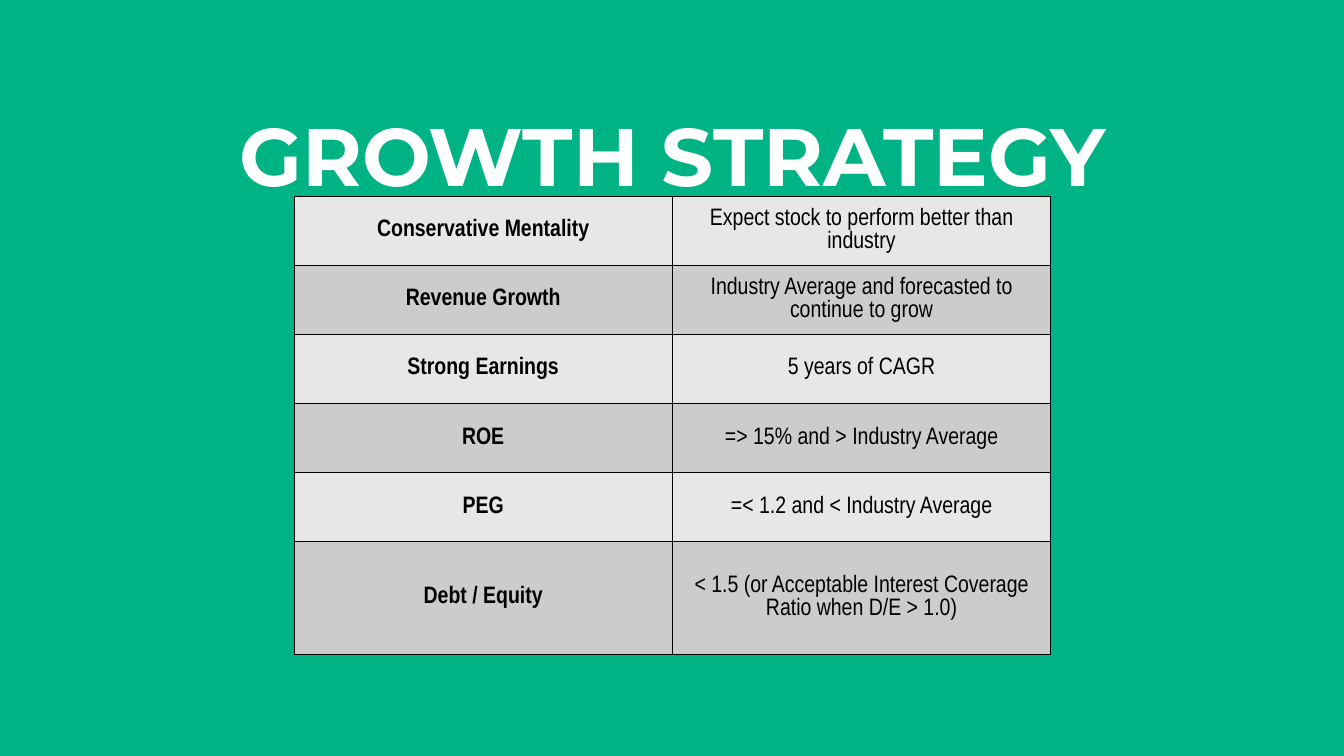
from pptx import Presentation
from pptx.dml.color import RGBColor
from pptx.enum.text import MSO_ANCHOR, PP_ALIGN
from pptx.oxml import parse_xml
from pptx.oxml.ns import nsdecls
from pptx.util import Inches, Pt

GREEN = RGBColor(0x00, 0xB3, 0x85)
WHITE = RGBColor(0xFF, 0xFF, 0xFF)
BLACK = RGBColor(0x00, 0x00, 0x00)
LIGHT = RGBColor(0xE7, 0xE7, 0xE7)
GREY = RGBColor(0xCC, 0xCC, 0xCC)


def write(para, text, **style):
    para.alignment = PP_ALIGN.CENTER
    run = para.add_run()
    run.text = text
    run.font.color.rgb = style.pop("color")
    for key, value in style.items():
        setattr(run.font, key, value)


def border(cell):
    props = cell._tc.get_or_add_tcPr()
    for index, side in enumerate(("lnL", "lnR", "lnT", "lnB")):
        props.insert(index, parse_xml(
            f'<a:{side} {nsdecls("a")} w="{Pt(1)}"><a:solidFill>'
            f'<a:srgbClr val="{BLACK}"/></a:solidFill></a:{side}>'))


deck = Presentation()
deck.slide_width = Inches(21.99)
deck.slide_height = Inches(12.37)
slide = deck.slides.add_slide(deck.slide_layouts[6])
slide.background.fill.solid()
slide.background.fill.fore_color.rgb = GREEN

title = slide.shapes.add_textbox(
    Inches(1.11), Inches(1.84), Inches(19.79), Inches(1.65))
frame = title.text_frame
frame.word_wrap = True
frame.vertical_anchor = MSO_ANCHOR.MIDDLE
head = frame.paragraphs[0]
head.line_spacing = 0.8
write(head, "GROWTH STRATEGY", name="Montserrat", size=Pt(96), bold=True, color=WHITE)

rules = [
    ("Conservative Mentality", "Expect stock to perform better than industry"),
    ("Revenue Growth", "Industry Average and forecasted to continue to grow"),
    ("Strong Earnings", "5 years of CAGR"),
    ("ROE", "=> 15% and > Industry Average"),
    ("PEG", "=< 1.2 and < Industry Average"),
    ("Debt / Equity", "< 1.5 (or Acceptable Interest Coverage Ratio when D/E > 1.0)"),
]
table = slide.shapes.add_table(
    len(rules), 2, Inches(4.81), Inches(3.21), Inches(12.38), Inches(7.49)).table
for row, texts in enumerate(rules):
    table.rows[row].height = Inches(1.84 if row == len(rules) - 1 else 1.13)
    for col, text in enumerate(texts):
        cell = table.cell(row, col)
        cell.vertical_anchor = MSO_ANCHOR.MIDDLE
        cell.fill.solid()
        cell.fill.fore_color.rgb = GREY if row % 2 else LIGHT
        border(cell)
        write(cell.text_frame.paragraphs[0], text, name="Arial Narrow",
              size=Pt(28), bold=col == 0, color=BLACK)

deck.save("out.pptx")
